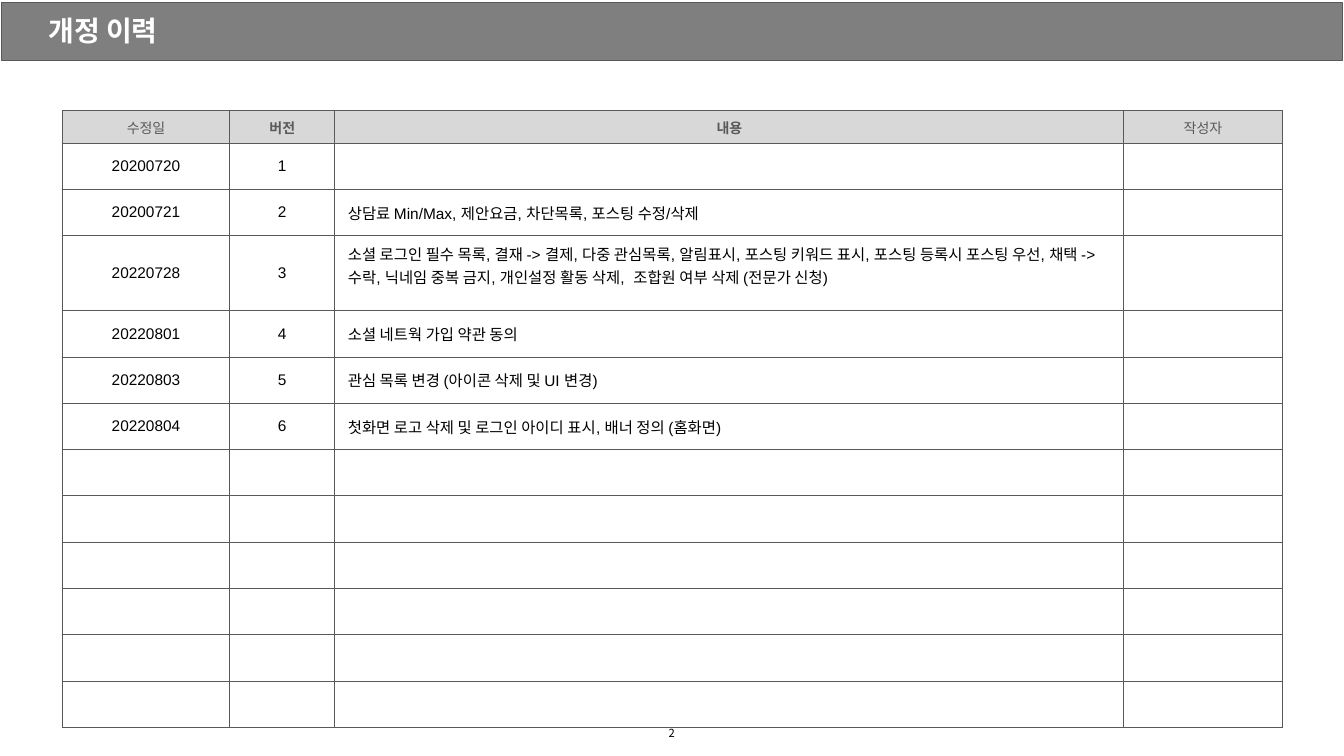
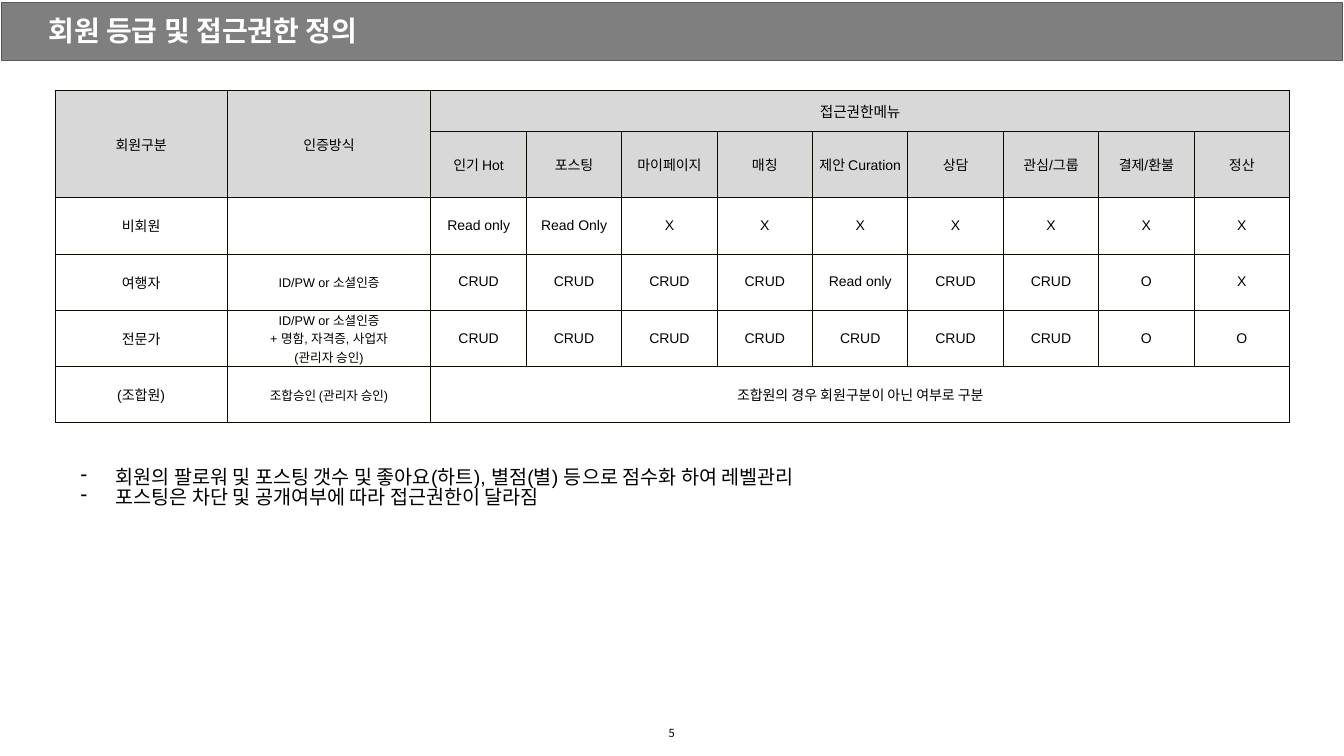
from lxml import etree
from pptx import Presentation
from pptx.dml.color import RGBColor
from pptx.enum.shapes import MSO_SHAPE
from pptx.enum.text import MSO_ANCHOR, PP_ALIGN
from pptx.oxml.ns import qn
from pptx.util import Pt

RECTANGLE = MSO_SHAPE.RECTANGLE
TOP, MIDDLE = MSO_ANCHOR.TOP, MSO_ANCHOR.MIDDLE
LEFT, CENTER = PP_ALIGN.LEFT, PP_ALIGN.CENTER
TITLE_ONLY = 5


def color(value):
    return RGBColor.from_string(value)


def set_margins(target, margins):
    target.margin_left, target.margin_top, target.margin_right, target.margin_bottom = map(Pt, margins)


def write(frame, text, size=10, font="Arial", fill="000000", bold=False, align=CENTER, spacing=None):
    """Fill a text frame, one paragraph for each line of text."""
    for index, line in enumerate(text.split("\n")):
        para = frame.add_paragraph() if index else frame.paragraphs[0]
        para.alignment = align
        if spacing:
            para.line_spacing = spacing
        span = para.add_run()
        span.text = line
        span.font.size = Pt(size)
        span.font.bold = bold
        span.font.color.rgb = color(fill)
        span.font.name = font
        etree.SubElement(span.font._element, qn("a:ea"), typeface=Deck.korean)


def set_borders(cell, value, width=0.75):
    properties = cell._tc.get_or_add_tcPr()
    for index, side in enumerate(("a:lnL", "a:lnR", "a:lnT", "a:lnB")):
        line = etree.Element(qn(side), w=str(Pt(width)))
        paint = etree.SubElement(line, qn("a:solidFill"))
        etree.SubElement(paint, qn("a:srgbClr"), val=value)
        properties.insert(index, line)


class Deck:
    korean = "Noto Sans CJK KR"
    band_fill, band_line = "7F7F7F", "595959"
    header_fill, body_fill = "D8D8D8", "FFFFFF"

    def __init__(self):
        self.file = Presentation()
        self.file.slide_width, self.file.slide_height = Pt(960.5), Pt(540)
        self.page = None

    def add_page(self, title, number):
        self.page = self.file.slides.add_slide(self.file.slide_layouts[TITLE_ONLY])
        self.band()
        self.title(title)
        self.text(0, 509.75, 960, 28, str(number), size=8, font=self.korean, anchor=MIDDLE)

    def band(self):
        """Draw the title band behind the title placeholder."""
        band = self.page.shapes.add_shape(RECTANGLE, Pt(1.25), Pt(1.5), Pt(958), Pt(41.5))
        band.shadow.inherit = False
        band.fill.solid()
        band.fill.fore_color.rgb = color(self.band_fill)
        band.line.color.rgb = color(self.band_line)
        band.line.width = Pt(0.75)
        band._element.getparent().insert(2, band._element)

    def title(self, text):
        box = self.page.shapes.title
        box.left, box.top, box.width, box.height = Pt(21), Pt(0), Pt(919), Pt(43)
        frame = box.text_frame
        frame.vertical_anchor = MIDDLE
        set_margins(frame, (13.5, 4.25, 8, 4.25))
        write(frame, text, size=20, font=self.korean, fill="FFFFFF", bold=True, align=LEFT)

    def text(self, left, top, width, height, text, anchor=TOP, margins=(7.2, 3.6, 7.2, 3.6), **style):
        box = self.page.shapes.add_textbox(Pt(left), Pt(top), Pt(width), Pt(height))
        frame = box.text_frame
        frame.word_wrap = True
        frame.vertical_anchor = anchor
        set_margins(frame, margins)
        write(frame, text, **style)
        return frame

    def dash_list(self, left, top, width, height, lines):
        frame = self.text(left, top, width, height, "\n".join(lines), margins=(7.2,) * 4,
                          size=14, align=LEFT, spacing=0.85)
        for para in frame.paragraphs:
            properties = para._p.get_or_add_pPr()
            properties.set("marL", str(Pt(36)))
            properties.set("indent", str(Pt(-25)))
            etree.SubElement(properties, qn("a:buChar"), char="-")

    def table(self, left, top, widths, heights, rows, style, margins, border, headers=1, merges=()):
        """Draw a table; style(row, column) gives the text format of a cell."""
        frame = self.page.shapes.add_table(len(heights), len(widths), Pt(left), Pt(top),
                                           Pt(sum(widths)), Pt(sum(heights)))
        table = frame.table
        table.first_row = table.horz_banding = False
        for column, width in zip(table.columns, widths):
            column.width = Pt(width)
        for row, height in zip(table.rows, heights):
            row.height = Pt(height)
        for r in range(len(heights)):
            for c in range(len(widths)):
                cell = table.cell(r, c)
                cell.fill.solid()
                cell.fill.fore_color.rgb = color(self.header_fill if r < headers else self.body_fill)
                cell.vertical_anchor = MIDDLE
                set_margins(cell, margins)
                set_borders(cell, border)
                if r < len(rows) and c < len(rows[r]) and rows[r][c]:
                    write(cell.text_frame, rows[r][c], **style(r, c))
        for first, last in merges:
            table.cell(*first).merge(table.cell(*last))
        return table


def revision_page(deck):
    def style(row, column):
        if row == 0:
            return {"fill": "595959", "bold": column in (1, 2)}
        return {"size": 11, "align": LEFT if column == 2 else CENTER}

    revisions = [
        ("20200720", ""),
        ("20200721", "상담료 Min/Max, 제안요금, 차단목록, 포스팅 수정/삭제"),
        ("20220728", "소셜 로그인 필수 목록, 결재 -> 결제, 다중 관심목록, 알림표시, 포스팅 키워드 표시, "
                     "포스팅 등록시 포스팅 우선, 채택 -> 수락, 닉네임 중복 금지, 개인설정 활동 삭제,  "
                     "조합원 여부 삭제 (전문가 신청)"),
        ("20220801", "소셜 네트웍 가입 약관 동의"),
        ("20220803", "관심 목록 변경 (아이콘 삭제 및 UI 변경)"),
        ("20220804", "첫화면 로고 삭제 및 로그인 아이디 표시, 배너 정의 (홈화면)"),
    ]
    rows = [("수정일", "버전", "내용", "작성자")]
    rows += [(date, str(version), change) for version, (date, change) in enumerate(revisions, 1)]
    long_row = 3
    heights = [23.5] + [33.1] * 12
    heights[long_row] = 53.5

    deck.add_page("개정 이력", 2)
    table = deck.table(44.5, 78.75, [119.75, 75, 564, 113], heights, rows, style,
                       margins=(9.4, 5, 9.4, 5), border="595959")
    table.cell(long_row, 2).vertical_anchor = TOP


def access_page(deck):
    def style(row, column):
        if (row, column) == (0, 2):
            return {"size": 10.5}
        return {"size": 9 if row > 1 and column == 1 else 10}

    rows = [
        ["회원구분", "인증방식", "접근권한메뉴"],
        ["", "", "인기 Hot", "포스팅", "마이페이지", "매칭", "제안 Curation", "상담",
         "관심/그룹", "결제/환불", "정산"],
        ["비회원", "", "Read only", "Read Only"] + ["X"] * 7,
        ["여행자", "ID/PW or 소셜인증"] + ["CRUD"] * 4 + ["Read only", "CRUD", "CRUD", "O", "X"],
        ["전문가", "ID/PW or 소셜인증\n+ 명함, 자격증, 사업자\n(관리자 승인)"] + ["CRUD"] * 7 + ["O", "O"],
        ["(조합원)", "조합승인 (관리자 승인)", "조합원의 경우 회원구분이 아닌 여부로 구분"],
    ]
    merges = [((0, 0), (1, 0)), ((0, 1), (1, 1)), ((0, 2), (0, 10)), ((5, 2), (5, 10))]

    deck.add_page("회원 등급 및 접근권한 정의", 5)
    deck.table(39.5, 64.75, [122.75, 145.75] + [68.2] * 9, [29.25, 47.25] + [40.25] * 4, rows, style,
               margins=(1.25, 0, 1.25, 0), border="090B00", headers=2, merges=merges)
    deck.dash_list(39.5, 327.5, 697.5, 48, [
        "회원의 팔로워 및 포스팅 갯수 및 좋아요(하트), 별점(별) 등으로 점수화 하여 레벨관리",
        "포스팅은 차단 및 공개여부에 따라 접근권한이 달라짐",
    ])


def main():
    deck = Deck()
    revision_page(deck)
    access_page(deck)
    deck.file.save("out.pptx")


if __name__ == "__main__":
    main()
